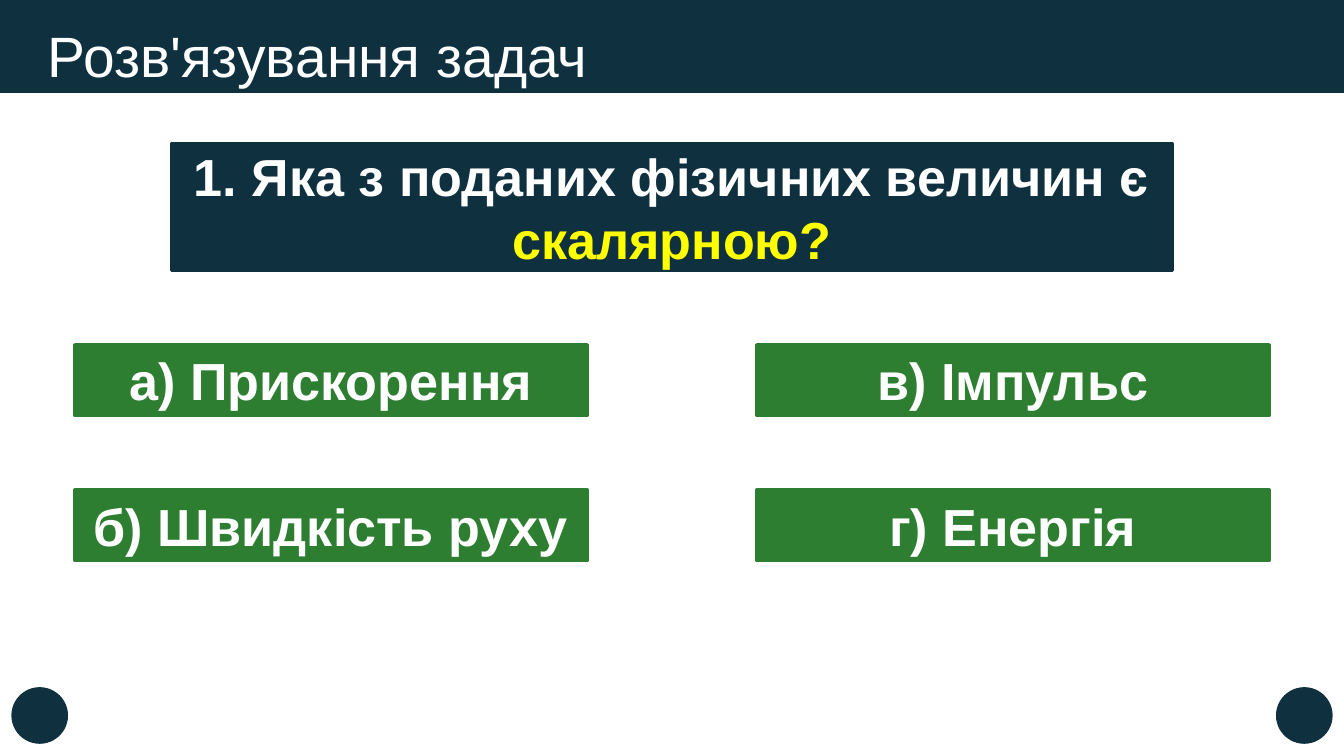
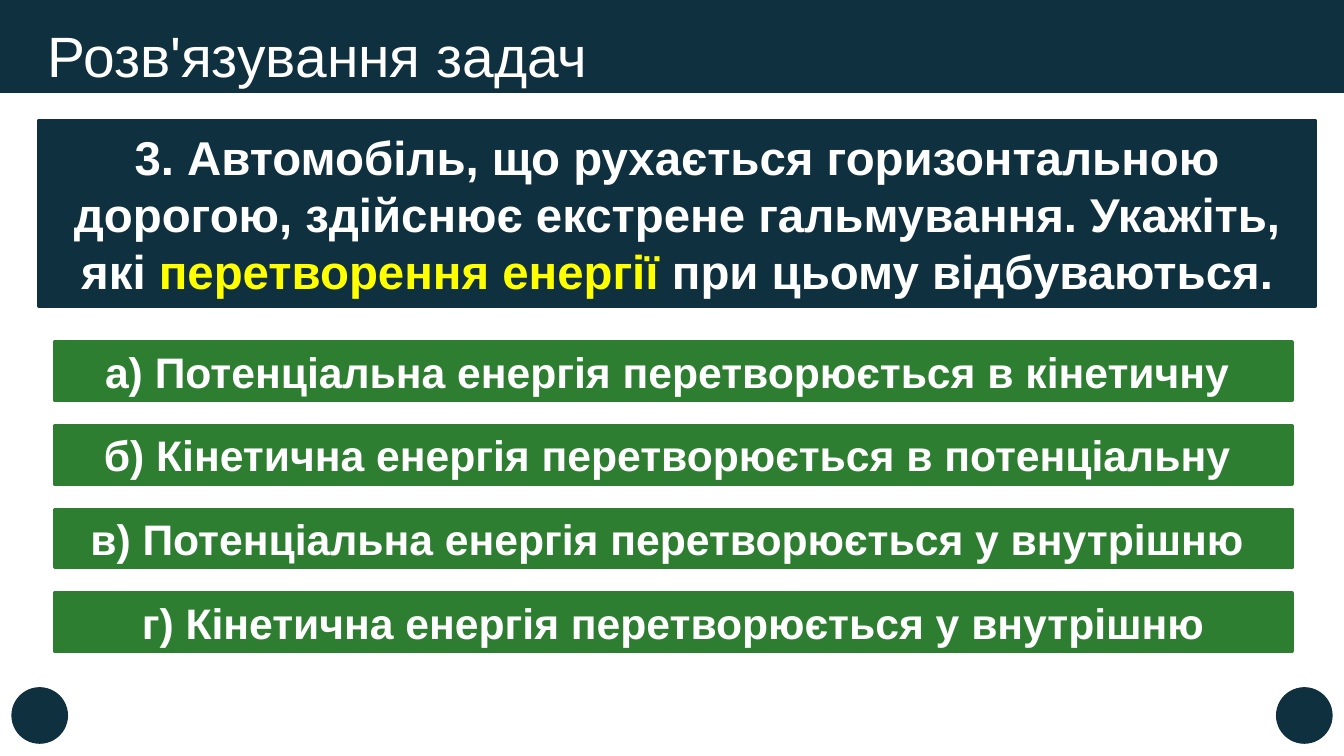
"""Build two physics quiz slides, each with a question and four answers."""

from dataclasses import dataclass

from pptx import Presentation
from pptx.dml.color import RGBColor as Rgb
from pptx.enum.shapes import MSO_SHAPE as Geo
from pptx.enum.text import MSO_ANCHOR as Anchor, MSO_AUTO_SIZE as Fit, PP_ALIGN as Align
from pptx.shapes.autoshape import Shape
from pptx.slide import Slide
from pptx.util import Inches, Pt


@dataclass(frozen=True)
class Theme:
    navy: Rgb = Rgb(0x0F, 0x30, 0x3F)
    green: Rgb = Rgb(0x2E, 0x7E, 0x32)
    white: Rgb = Rgb(0xFF, 0xFF, 0xFF)
    yellow: Rgb = Rgb(0xFF, 0xFF, 0x00)
    font: str = "Arial"
    title: int = 48
    large: int = 44
    medium: int = 40
    small: int = 36


@dataclass(frozen=True)
class Box:
    left: float
    top: float
    width: float
    height: float


@dataclass(frozen=True)
class Part:
    text: str
    marked: bool = False


@dataclass(frozen=True)
class Grid:
    first: Box
    rows: int
    across: float
    down: float

    def cell(self, index: int) -> Box:
        col, row = divmod(index, self.rows)
        left = self.first.left + col * self.across
        top = self.first.top + row * self.down
        return Box(left, top, self.first.width, self.first.height)


@dataclass(frozen=True)
class Quiz:
    frame: Box
    ask: tuple[Part, ...]
    size: int
    grid: Grid
    answers: tuple[str, ...]
    small: int


THEME = Theme()
WIDTH, HEIGHT = 15.75, 8.86
TITLE = "Розв'язування задач"
BAND = Box(0, 0, WIDTH, 1.08)
HEAD = Box(0.46, 0.3, 13.58, 0.78)
DOT = 0.65
EDGE = 0.14
DOTS = tuple(Box(x, 8.06, DOT, DOT) for x in (EDGE, WIDTH - EDGE - DOT))

QUIZZES = (
    Quiz(
        frame=Box(2.01, 1.69, 11.73, 1.48),
        ask=(
            Part("1. Яка з поданих фізичних величин є "),
            Part("скалярною?", True),
        ),
        size=THEME.large,
        grid=Grid(Box(0.88, 4.04, 6, 0.83), rows=2, across=7.99, down=1.7),
        answers=("а) Прискорення", "б) Швидкість руху", "в) Імпульс", "г) Енергія"),
        small=THEME.large,
    ),
    Quiz(
        frame=Box(0.46, 1.41, 14.95, 2.18),
        ask=(
            Part(
                "3. Автомобіль, що рухається горизонтальною дорогою, "
                "здійснює екстрене гальмування. Укажіть, які "
            ),
            Part("перетворення енергії", True),
            Part(" при цьому відбуваються."),
        ),
        size=THEME.medium,
        grid=Grid(Box(0.64, 4.01, 14.5, 0.68), rows=4, across=0, down=0.98),
        answers=(
            "а) Потенціальна енергія перетворюється в кінетичну ",
            "б) Кінетична енергія перетворюється в потенціальну ",
            "в) Потенціальна енергія перетворюється у внутрішню ",
            "г) Кінетична енергія перетворюється у внутрішню",
        ),
        small=THEME.small,
    ),
)


def draw(slide: Slide, geo: Geo, box: Box, color: Rgb, line: float) -> Shape:
    shape = slide.shapes.add_shape(
        geo, Inches(box.left), Inches(box.top), Inches(box.width), Inches(box.height)
    )
    shape.shadow.inherit = False
    shape.fill.solid()
    shape.fill.fore_color.rgb = color
    shape.line.color.rgb = color
    shape.line.width = Pt(line)
    return shape


def write(shape: Shape, parts: tuple[Part, ...], size: int, bold: bool, align: Align) -> None:
    frame = shape.text_frame
    frame.word_wrap = True
    frame.auto_size = Fit.NONE
    frame.vertical_anchor = Anchor.MIDDLE
    para = frame.paragraphs[0]
    para.alignment = align
    para.font.name = THEME.font
    para.font.size = Pt(size)
    para.font.bold = bold
    para.font.color.rgb = THEME.white
    for part in parts:
        run = para.add_run()
        run.text = part.text
        if part.marked:
            run.font.color.rgb = THEME.yellow


def panel(slide: Slide, box: Box, color: Rgb, parts: tuple[Part, ...], size: int) -> None:
    shape = draw(slide, Geo.RECTANGLE, box, color, 3)
    write(shape, parts, size, True, Align.CENTER)


def base(slide: Slide) -> None:
    title = slide.shapes.title
    band = draw(slide, Geo.RECTANGLE, BAND, THEME.navy, 1)
    title.element.addprevious(band.element)
    title.left, title.top = Inches(HEAD.left), Inches(HEAD.top)
    title.width, title.height = Inches(HEAD.width), Inches(HEAD.height)
    write(title, (Part(TITLE),), THEME.title, False, Align.LEFT)
    title.text_frame.paragraphs[0].line_spacing = 0.9
    for box in DOTS:
        draw(slide, Geo.OVAL, box, THEME.navy, 1)


def build(slide: Slide, quiz: Quiz) -> None:
    base(slide)
    panel(slide, quiz.frame, THEME.navy, quiz.ask, quiz.size)
    for index, text in enumerate(quiz.answers):
        panel(slide, quiz.grid.cell(index), THEME.green, (Part(text),), quiz.small)


def main() -> None:
    deck = Presentation()
    deck.slide_width, deck.slide_height = Inches(WIDTH), Inches(HEIGHT)
    layout = deck.slide_layouts.get_by_name("Title Only")
    for quiz in QUIZZES:
        build(deck.slides.add_slide(layout), quiz)
    deck.save("out.pptx")


if __name__ == "__main__":
    main()
